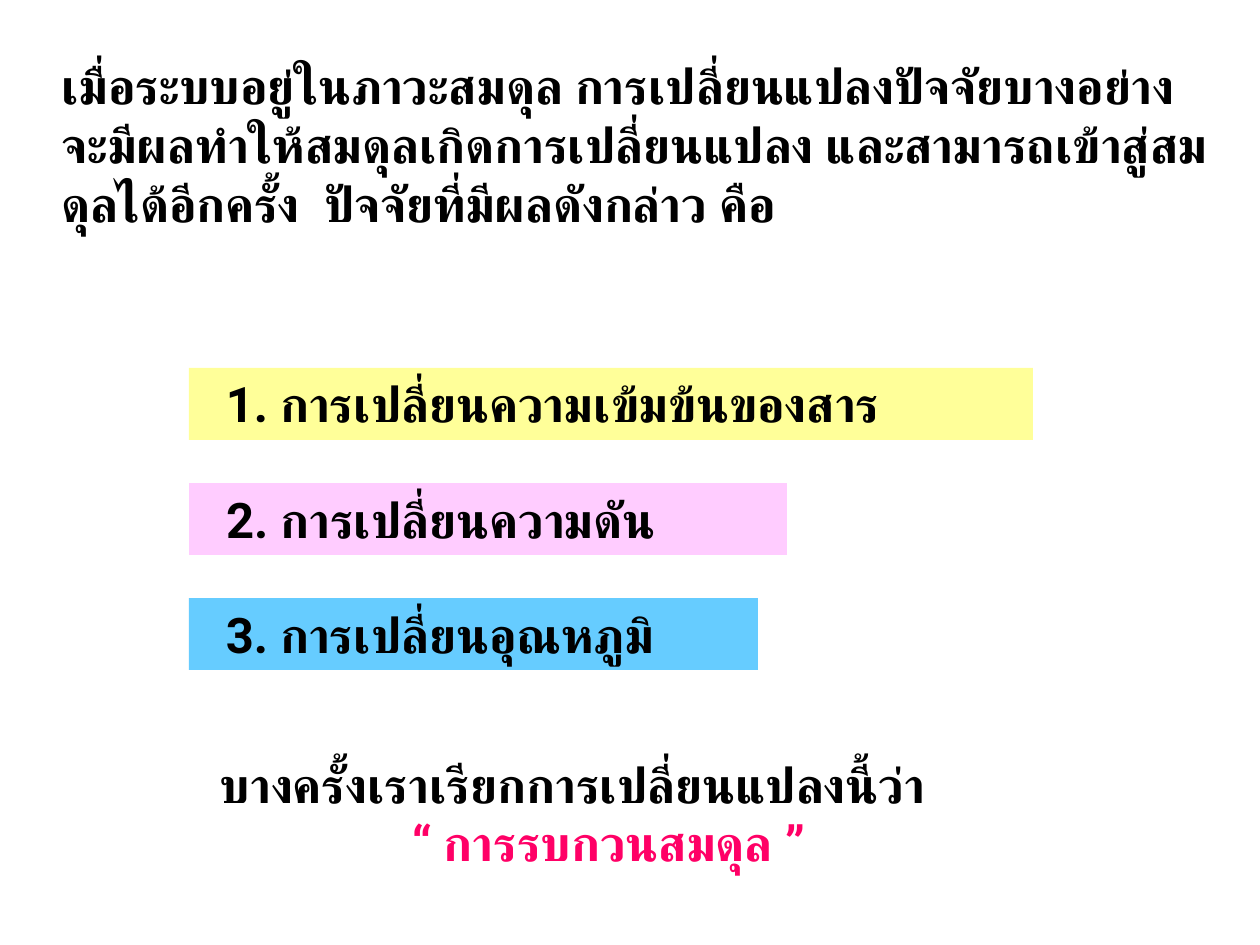
import pptx
import pptx.dml.color
import pptx.enum.shapes
import pptx.enum.text
import pptx.util
import lxml.etree

EMU_PER_PX = 914400 / 126
DRAWING_NS = "http://schemas.openxmlformats.org/drawingml/2006/main"


def px(n):
    return pptx.util.Emu(round(n * EMU_PER_PX))


def color(value):
    return pptx.dml.color.RGBColor.from_string(value)


class SlideBuilder:
    FONT = {"name": "Roboto", "size": pptx.util.Pt(28), "bold": True}
    FRAME = {"word_wrap": True,
             "vertical_anchor": pptx.enum.text.MSO_ANCHOR.TOP,
             "margin_left": px(13), "margin_right": px(13),
             "margin_top": px(6), "margin_bottom": px(6)}

    def __init__(self, prs):
        self.s = prs.slides.add_slide(prs.slide_layouts[6])

    def fill_text(self, sp, lines, **frame):
        """Fill a shape with paragraphs given as (text, colour, indent)."""
        tf = sp.text_frame
        for key, value in {**self.FRAME, **frame}.items():
            setattr(tf, key, value)
        for i, (text, ink, indent) in enumerate(lines):
            p = tf.add_paragraph() if i else tf.paragraphs[0]
            p.alignment = pptx.enum.text.PP_ALIGN.LEFT
            if indent:
                p._p.get_or_add_pPr().set("marL", str(px(indent)))
            r = p.add_run()
            r.text = text
            for key, value in self.FONT.items():
                setattr(r.font, key, value)
            r.font.color.rgb = color(ink)
            # Thai letters take the complex-script font
            cs = lxml.etree.SubElement(r._r.get_or_add_rPr(), f"{{{DRAWING_NS}}}cs")
            cs.set("typeface", self.FONT["name"])

    def text(self, x, y, w, h, lines):
        self.fill_text(self.s.shapes.add_textbox(px(x), px(y), px(w), px(h)), lines)

    def bar(self, x, y, w, h, fill, label):
        sp = self.s.shapes.add_shape(
            pptx.enum.shapes.MSO_SHAPE.RECTANGLE, px(x), px(y), px(w), px(h))
        sp.shadow.inherit = False
        sp.fill.solid()
        sp.fill.fore_color.rgb = color(fill)
        sp.line.fill.background()
        self.fill_text(sp, [(label, "000000", 0)], margin_left=px(37))


def main():
    prs = pptx.Presentation()
    prs.slide_width, prs.slide_height = px(1260), px(945)
    slide = SlideBuilder(prs)

    # Introduction
    slide.text(49, 50, 1172, 251, [(
        "เมื่อระบบอยู่ในภาวะสมดุล การเปลี่ยนแปลงปัจจัยบางอย่าง"
        "จะมีผลทำให้สมดุลเกิดการเปลี่ยนแปลง และสามารถเข้า"
        "สู่สมดุลได้อีกครั้ง  ปัจจัยที่มีผลดังกล่าว คือ", "000000", 0)])

    # The three factors, evenly spaced
    factors = [("1. การเปลี่ยนความเข้มข้นของสาร", 844, "FFFF99"),
               ("2. การเปลี่ยนความดัน", 598, "FFCCFF"),
               ("3. การเปลี่ยนอุณหภูมิ", 569, "66CCFF")]
    for i, (label, width, fill) in enumerate(factors):
        slide.bar(189, 368 + 115 * i, width, 72, fill, label)

    # Name of the change
    slide.text(207, 748, 858, 131, [
        ("บางครั้งเราเรียกการเปลี่ยนแปลงนี้ว่า", "000000", 0),
        ("“ การรบกวนสมดุล ”", "FF0066", 192)])

    prs.save("out.pptx")


if __name__ == "__main__":
    main()
